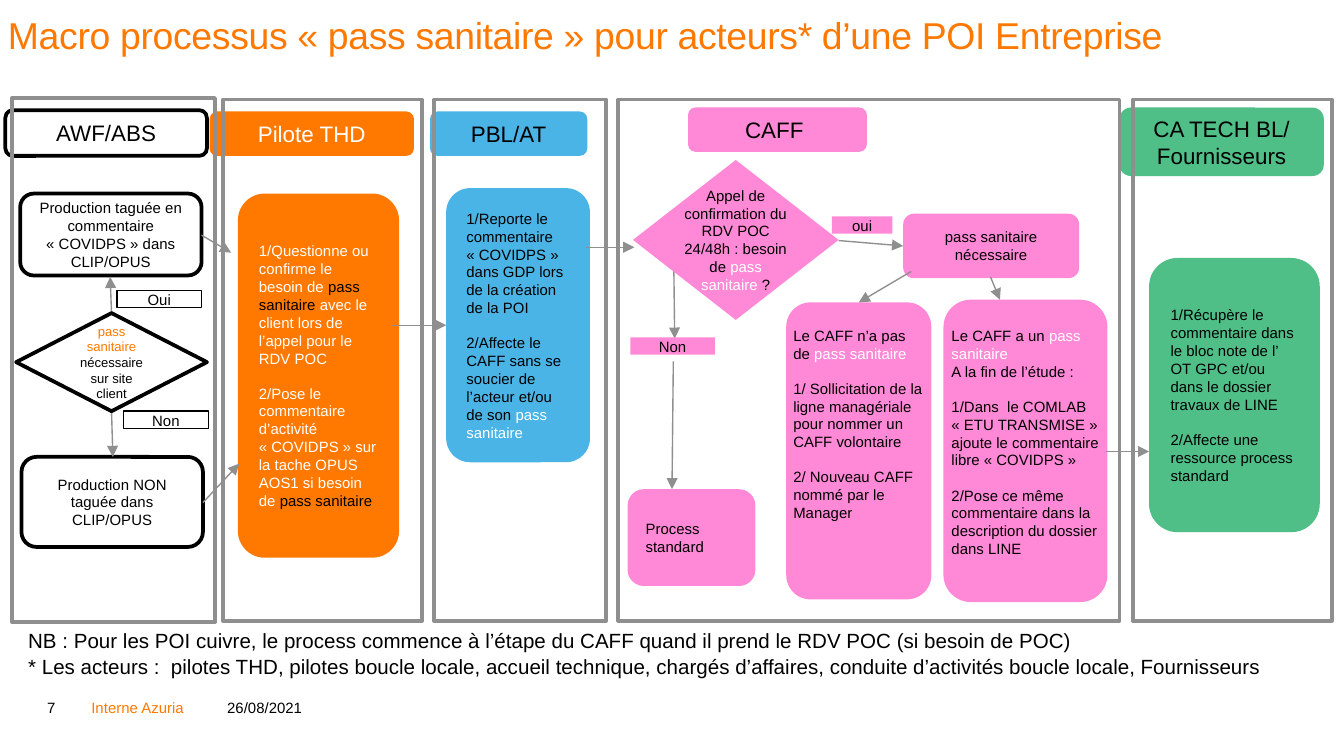
from dataclasses import dataclass
from typing import Any

from lxml.etree import SubElement
from pptx import Presentation
from pptx.dml.color import RGBColor
from pptx.enum.shapes import MSO_CONNECTOR as Connector, MSO_SHAPE as Preset
from pptx.enum.text import MSO_ANCHOR as Anchor, PP_ALIGN as Align
from pptx.oxml.ns import qn
from pptx.util import Pt

PX = 9144  # EMU per px, 100 px to the inch
BLACK, WHITE, GREY = "000000", "FFFFFF", "8F8F8F"
ORANGE, BLUE, PINK, GREEN = "FF7900", "4BB4E6", "FF89D7", "50BE87"
BLANK_LINE = 9.2  # points, one line of 8 point text
HARD_SPACE = chr(160)


@dataclass
class Box:
    """A shape with text; words between bars take the accent colour."""
    left: int
    top: int
    width: int
    height: int
    text: str = ""
    fill: str | None = None
    line: str | None = None
    line_width: float = 2
    preset: Preset = Preset.ROUNDED_RECTANGLE
    size: int = 8
    color: str = BLACK
    accent: str = WHITE
    align: Align = Align.LEFT
    anchor: Anchor = Anchor.MIDDLE
    insets: tuple[int, int, int, int] = (10, 5, 10, 5)
    wrap: bool = True


@dataclass
class Arrow:
    x1: int
    y1: int
    x2: int
    y2: int


def rgb(color: str) -> RGBColor:
    return RGBColor.from_string(color)


def set_values(target: Any, values: dict[str, Any]) -> None:
    for name, value in values.items():
        setattr(target, name, value)


def french_quotes(text: str) -> str:
    """Keep the words inside French quotes together with their marks."""
    return text.replace("« ", "«" + HARD_SPACE).replace(" »", HARD_SPACE + "»")


def write_text(shape: Any, box: Box) -> None:
    frame = shape.text_frame
    sides = ("margin_left", "margin_top", "margin_right", "margin_bottom")
    set_values(frame, {side: inset * PX for side, inset in zip(sides, box.insets)})
    set_values(frame, {"word_wrap": box.wrap, "vertical_anchor": box.anchor})
    for index, text in enumerate(french_quotes(box.text).split("\n")):
        paragraph = frame.add_paragraph() if index else frame.paragraphs[0]
        paragraph.alignment = box.align
        # Numbered steps stand one line apart
        if index and text.startswith(("1/", "2/")):
            paragraph.space_before = Pt(BLANK_LINE)
        for part, words in enumerate(text.split("|")):
            if words:
                run = paragraph.add_run()
                run.text = words
                set_values(run.font, {"name": "Arial", "size": Pt(box.size)})
                run.font.color.rgb = rgb(box.accent if part % 2 else box.color)


def draw_box(slide: Any, box: Box) -> None:
    shape = slide.shapes.add_shape(
        box.preset, *(n * PX for n in (box.left, box.top, box.width, box.height)))
    shape.shadow.inherit = False
    if box.fill:
        shape.fill.solid()
        shape.fill.fore_color.rgb = rgb(box.fill)
    else:
        shape.fill.background()
    if box.line:
        shape.line.color.rgb = rgb(box.line)
        shape.line.width = Pt(box.line_width)
    else:
        shape.line.fill.background()
    if box.text:
        write_text(shape, box)


def draw_text(slide: Any, box: Box) -> Any:
    shape = slide.shapes.add_textbox(
        *(n * PX for n in (box.left, box.top, box.width, box.height)))
    write_text(shape, box)
    return shape


def draw_arrow(slide: Any, arrow: Arrow) -> None:
    connector = slide.shapes.add_connector(
        Connector.STRAIGHT, *(n * PX for n in (arrow.x1, arrow.y1, arrow.x2, arrow.y2)))
    connector.line.color.rgb = rgb(GREY)
    connector.line.width = Pt(0.75)
    properties = connector._element.spPr
    SubElement(properties.find(qn("a:ln")), qn("a:tailEnd"), type="triangle")
    SubElement(properties, qn("a:effectLst"))


def header(left: int, top: int, width: int, height: int, text: str, fill: str,
           color: str = BLACK, line: str | None = None) -> Box:
    return Box(left, top, width, height, text, fill, line,
               size=12, color=color, align=Align.CENTER)


def label(left: int, top: int, width: int, text: str, fill: str,
          line: str | None = None) -> Box:
    return Box(left, top, width, 13, text, fill, line, 0.75, Preset.RECTANGLE,
               align=Align.CENTER, anchor=Anchor.TOP, insets=(0, 0, 0, 0))


def note(left: int, top: int, width: int, height: int, text: str, size: int,
         color: str = BLACK, wrap: bool = True) -> Box:
    return Box(left, top, width, height, text, size=size, color=color,
               anchor=Anchor.TOP, insets=(0, 0, 0, 0), wrap=wrap)


HEADERS = [
    header(4, 82, 150, 34, "AWF/ABS", WHITE, line=BLACK),
    header(156, 83, 152, 33, "Pilote THD", ORANGE, WHITE),
    header(320, 83, 117, 33, "PBL/AT", BLUE),
    header(512, 80, 133, 33, "CAFF ", PINK),
    header(833, 80, 152, 51, "CA TECH BL/\nFournisseurs", GREEN),
]

STEPS = [
    Box(15, 144, 135, 61, "Production taguée en commentaire « COVIDPS » dans CLIP/OPUS",
        WHITE, BLACK, align=Align.CENTER),
    Box(16, 340, 135, 67, "Production NON taguée dans CLIP/OPUS",
        WHITE, BLACK, align=Align.CENTER),
    Box(177, 144, 120, 271,
        "1/Questionne ou confirme le besoin de |pass sanitaire |avec le client lors de "
        "l’appel pour le RDV POC\n2/Pose le commentaire d’activité « COVIDPS » sur la "
        "tache OPUS AOS1 si besoin de |pass sanitaire", ORANGE, color=WHITE, accent=BLACK),
    Box(332, 140, 107, 204,
        "1/Reporte le commentaire\n« COVIDPS » dans GDP lors de la création de la POI\n"
        "2/Affecte le CAFF sans se soucier de l’acteur et/ou de son |pass sanitaire", BLUE),
    Box(672, 159, 131, 48, "pass sanitaire nécessaire", PINK, align=Align.CENTER),
    Box(585, 225, 108, 221,
        "Le CAFF n’a pas de |pass sanitaire|\n1/ Sollicitation de la ligne managériale "
        "pour nommer un CAFF volontaire\n2/ Nouveau CAFF nommé par le Manager",
        PINK, insets=(0, 0, 0, 40)),
    Box(702, 223, 122, 225,
        "Le CAFF a un |pass sanitaire|\nA la fin de l’étude :\n1/Dans  le COMLAB "
        "« ETU TRANSMISE » ajoute le commentaire libre « COVIDPS »\n2/Pose ce même "
        "commentaire dans la description du dossier dans LINE",
        PINK, insets=(0, 0, 0, 13)),
    Box(467, 364, 95, 72, "Process standard", PINK),
    Box(855, 192, 127, 204,
        "1/Récupère le commentaire dans le bloc note de l’ OT GPC et/ou dans le dossier "
        "travaux de LINE\n2/Affecte une ressource process standard", GREEN),
]

LANES = [Box(left, top, width, height, line=GREY, preset=Preset.RECTANGLE)
         for left, top, width, height in (
             (9, 73, 151, 390), (166, 74, 148, 388), (323, 74, 128, 388),
             (460, 74, 373, 388), (843, 74, 148, 388))]

ARROWS = [
    Arrow(83, 233, 82, 206), Arrow(83, 306, 84, 340),
    Arrow(151, 374, 178, 345), Arrow(150, 175, 172, 188),
    Arrow(292, 242, 332, 242), Arrow(436, 184, 472, 184),
    Arrow(624, 179, 672, 183), Arrow(678, 202, 639, 225),
    Arrow(737, 206, 744, 223), Arrow(501, 166, 502, 252),
    Arrow(501, 269, 500, 364), Arrow(823, 336, 855, 336),
]

DECISIONS = [
    Box(12, 233, 142, 73, "|pass sanitaire |nécessaire sur site client", WHITE, BLACK,
        preset=Preset.DIAMOND, size=7, accent=ORANGE, align=Align.CENTER),
    Box(471, 119, 153, 119,
        "Appel de confirmation du RDV POC 24/48h : besoin de |pass sanitaire| ?", PINK,
        preset=Preset.DIAMOND, align=Align.CENTER, insets=(0, 0, 0, 0)),
    label(87, 216, 63, "Oui", WHITE, BLACK),
    label(92, 306, 63, "Non", WHITE, BLACK),
    label(619, 161, 45, "oui", PINK),
    label(469, 251, 63, "Non", PINK),
]

TITLE = note(6, 13, 980, 47,
             "Macro processus « pass sanitaire » pour acteurs* d’une POI Entreprise", 20, ORANGE)

NOTES = [
    note(21, 467, 906, 19, "NB : Pour les POI cuivre, le process commence à l’étape du CAFF "
         "quand il prend le RDV POC (si besoin de POC)", 11),
    note(21, 487, 927, 37, "* Les acteurs :  pilotes THD, pilotes boucle locale, accueil "
         "technique, chargés d’affaires, conduite d’activités boucle locale, Fournisseurs", 11),
    note(35, 520, 29, 13, "7", 8),
    note(68, 520, 81, 13, "Interne Azuria", 8, ORANGE, wrap=False),
    note(169, 520, 59, 13, "26/08/2021", 8, wrap=False),
]


def main() -> None:
    presentation = Presentation()
    width = 1000 * PX
    set_values(presentation, {"slide_width": width, "slide_height": width * 9 // 16})
    slide = presentation.slides.add_slide(presentation.slide_layouts[6])

    # Title, slightly tightened
    paragraph = draw_text(slide, TITLE).text_frame.paragraphs[0]
    paragraph.line_spacing = 0.9
    paragraph.runs[0].font._element.set("spc", "-20")

    # Process, from back to front
    for box in HEADERS + STEPS + LANES:
        draw_box(slide, box)
    for arrow in ARROWS:
        draw_arrow(slide, arrow)
    for box in DECISIONS:
        draw_box(slide, box)

    # Notes and footer
    for box in NOTES:
        draw_text(slide, box)
    presentation.save("out.pptx")


if __name__ == "__main__":
    main()
